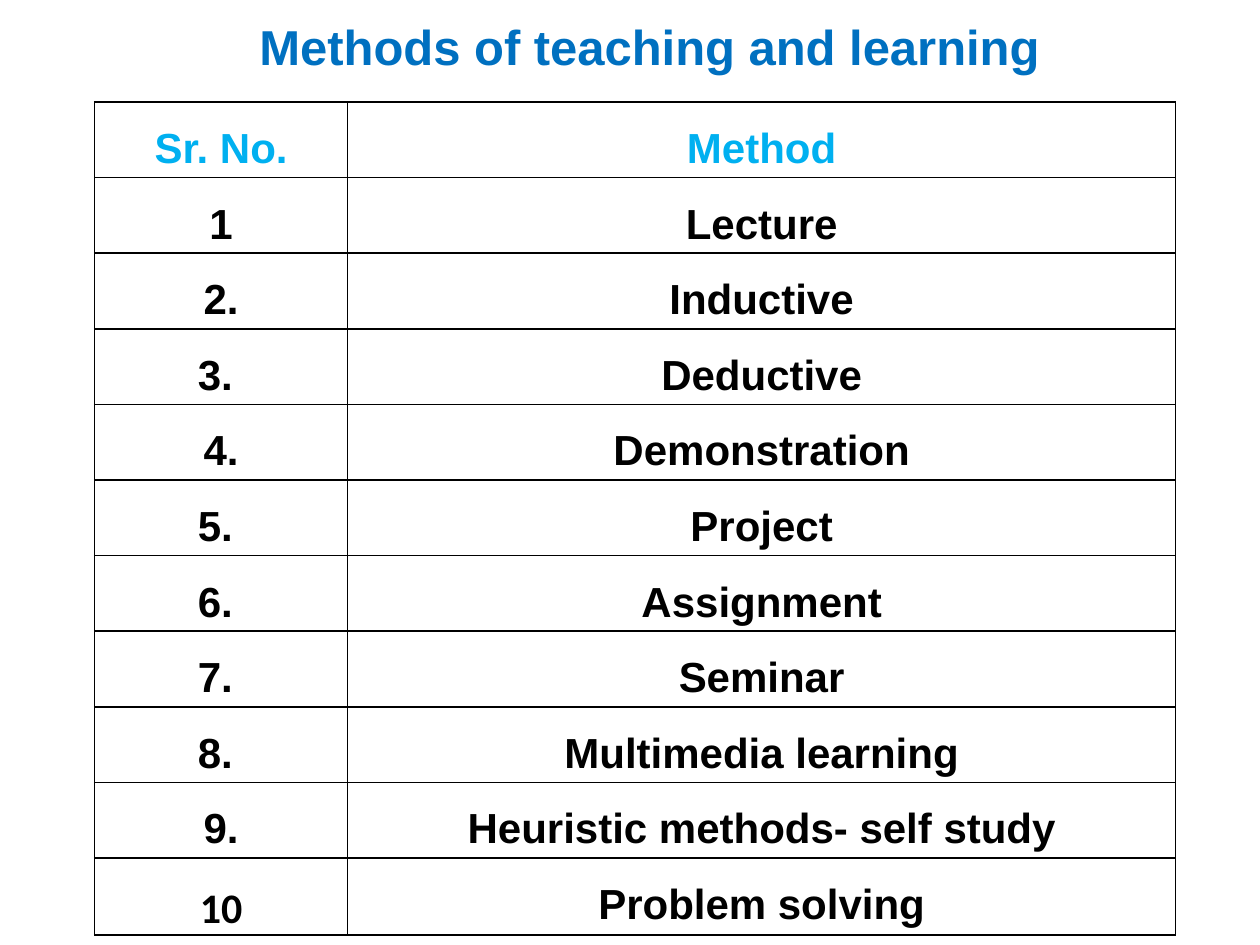
import lxml.etree
import pptx
import pptx.dml.color
import pptx.enum.text
import pptx.oxml.ns
import pptx.util

Inches = pptx.util.Inches
Pt = pptx.util.Pt

COLOURS = {"title": "0070C0", "header": "00B0F0", "body": "000000", "border": "000000"}

ROWS = [
    ("Sr. No.", "Method"),
    ("1", "Lecture"),
    ("2.", "Inductive"),
    ("3. ", "Deductive"),
    ("4.", "Demonstration"),
    ("5. ", "Project"),
    ("6. ", "Assignment"),
    ("7. ", "Seminar"),
    ("8. ", "Multimedia learning"),
    ("9.", "Heuristic methods- self study"),
    ("10", "Problem solving"),
]
COLUMN_WIDTHS = [2.01, 6.57]
ROW_HEIGHTS = [0.6] * 10 + [0.56]


class SlideBuilder:
    font = "Arial"
    title_size = 28
    table_size = 24
    border_width = 1

    def __init__(self, page):
        self.page = page

    def format_text(self, frame, text, size, colour, font=None):
        frame.text = text
        para = frame.paragraphs[0]
        para.alignment = pptx.enum.text.PP_ALIGN.CENTER
        for span in para.runs:
            span.font.name = font or self.font
            span.font.size = Pt(size)
            span.font.bold = True
            span.font.color.rgb = pptx.dml.color.RGBColor.from_string(COLOURS[colour])
        return para

    def add_title(self, text, left, top, width, height):
        box = self.page.shapes.title
        box.left, box.top = Inches(left), Inches(top)
        box.width, box.height = Inches(width), Inches(height)
        frame = box.text_frame
        frame.word_wrap = False
        frame.auto_size = pptx.enum.text.MSO_AUTO_SIZE.NONE
        self.format_text(frame, text, self.title_size, "title")

    def add_borders(self, cell):
        qualified = pptx.oxml.ns.qn
        properties = cell._tc.get_or_add_tcPr()
        for side in ("a:lnL", "a:lnR", "a:lnT", "a:lnB"):
            line = lxml.etree.SubElement(properties, qualified(side), w=str(Pt(self.border_width)))
            fill = lxml.etree.SubElement(line, qualified("a:solidFill"))
            lxml.etree.SubElement(fill, qualified("a:srgbClr"), val=COLOURS["border"])

    def format_cell(self, cell, text, colour, font):
        cell.margin_left = cell.margin_right = Inches(0.04)
        cell.margin_top = cell.margin_bottom = 0
        para = self.format_text(cell.text_frame, text, self.table_size, colour, font)
        para.line_spacing = 1.5
        self.add_borders(cell)
        cell.fill.background()

    def add_table(self, rows, left, top, widths, heights, fonts):
        frame = self.page.shapes.add_table(
            len(rows), len(widths), Inches(left), Inches(top),
            Inches(sum(widths)), Inches(sum(heights)))
        table = frame.table
        table.first_row = table.horz_banding = False
        for column, width in zip(table.columns, widths):
            column.width = Inches(width)
        for row, height in zip(table.rows, heights):
            row.height = Inches(height)
        for row_index, texts in enumerate(rows):
            colour = "body" if row_index else "header"
            for column_index, text in enumerate(texts):
                cell = table.cell(row_index, column_index)
                self.format_cell(cell, text, colour, fonts.get((row_index, column_index)))


def main():
    deck = pptx.Presentation()
    deck.slide_width, deck.slide_height = Inches(10), Inches(7.5)
    builder = SlideBuilder(deck.slides.add_slide(deck.slide_layouts[5]))
    builder.add_title("Methods of teaching and learning", 1.92, 0.08, 6.47, 0.57)
    builder.add_table(ROWS, 0.75, 0.81, COLUMN_WIDTHS, ROW_HEIGHTS, {(10, 0): "Calibri"})
    deck.save("out.pptx")


if __name__ == "__main__":
    main()
